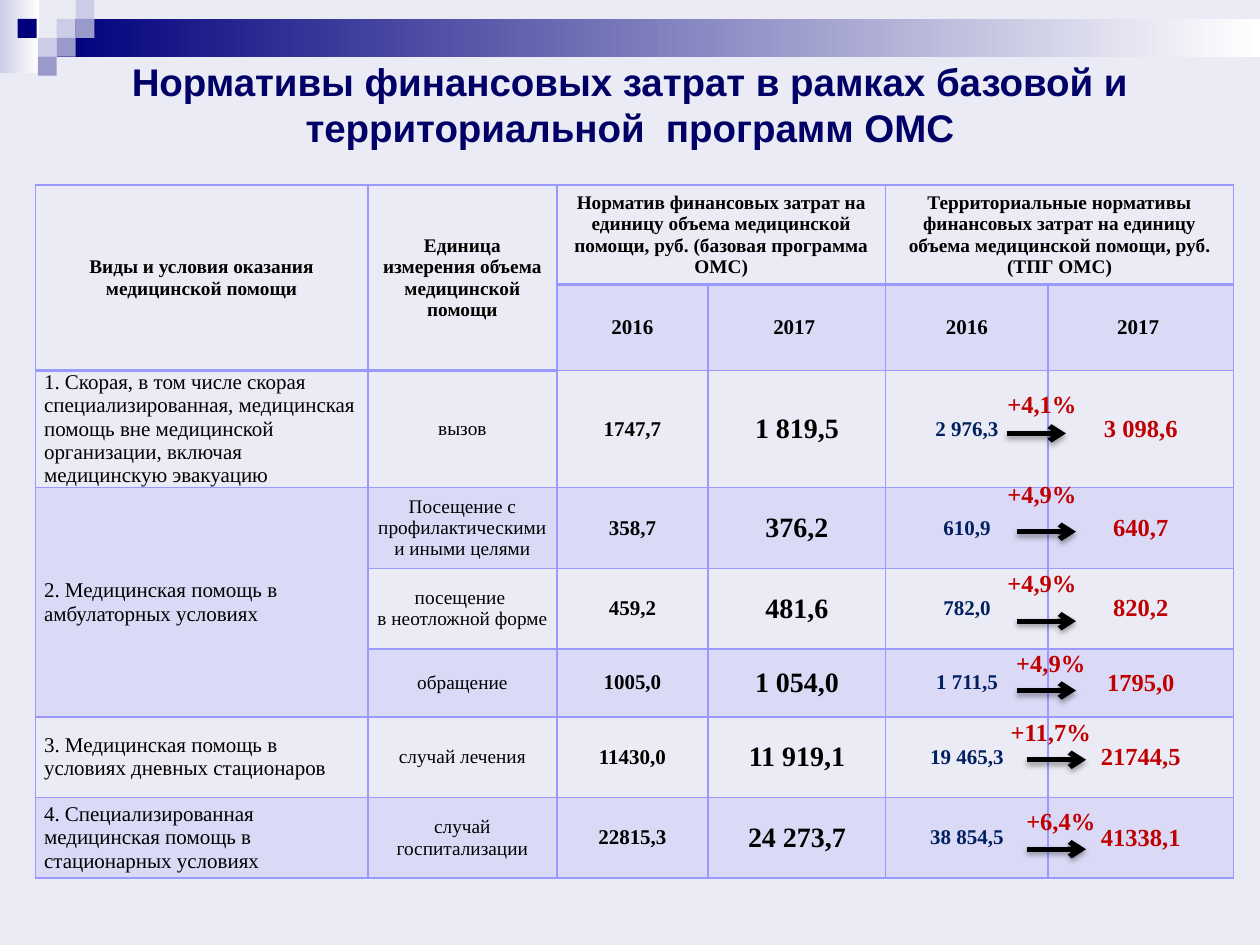
import pptx
import pptx.dml.color
import pptx.enum.shapes
import pptx.enum.text
import pptx.oxml
import pptx.oxml.ns
import pptx.util
from pptx.util import Inches

NAMESPACE = pptx.oxml.ns.nsdecls("a")
CENTER = pptx.enum.text.PP_ALIGN.CENTER
LEFT = pptx.enum.text.PP_ALIGN.LEFT
MIDDLE = pptx.enum.text.MSO_ANCHOR.MIDDLE
SERIF = "Times New Roman"
BLACK, NAVY, RED, LILAC = "000000", "002060", "C00000", "9999FF"


def color(value):
    return pptx.dml.color.RGBColor.from_string(value)


def apply(target, formats):
    for name, value in formats.items():
        setattr(target, name, value)


class SlideBuilder:
    def __init__(self, deck, background):
        self.page = deck.slides.add_slide(deck.slide_layouts[5])
        self.page.background.fill.solid()
        self.page.background.fill.fore_color.rgb = color(background)

    def put_text(self, frame, text, size, shade, bold=True, font=SERIF, align=CENTER):
        frame.text = text
        for para in frame.paragraphs:
            para.alignment = align
            for span in para.runs:
                apply(span.font, {"name": font, "size": pptx.util.Pt(size), "bold": bold})
                span.font.color.rgb = color(shade)

    def title(self, left, top, width, height, text):
        box = self.page.shapes.title
        apply(box, {"left": Inches(left), "top": Inches(top),
                    "width": Inches(width), "height": Inches(height)})
        apply(box.text_frame, {"vertical_anchor": MIDDLE, "word_wrap": True,
                               "auto_size": pptx.enum.text.MSO_AUTO_SIZE.NONE})
        self.put_text(box.text_frame, text, 22, "000066", font="Arial")

    def rectangle(self, left, top, width, height, *shades):
        box = self.page.shapes.add_shape(
            pptx.enum.shapes.MSO_SHAPE.RECTANGLE,
            Inches(left), Inches(top), Inches(width), Inches(height))
        box.shadow.inherit = False
        box.line.fill.background()
        if len(shades) == 1:
            box.fill.solid()
            box.fill.fore_color.rgb = color(shades[0])
        else:
            box.fill.gradient()
            box.fill.gradient_angle = 0
            for stop, shade in zip(box.fill.gradient_stops, shades):
                stop.color.rgb = color(shade)

    def label(self, left, top, text):
        box = self.page.shapes.add_textbox(
            Inches(left), Inches(top), Inches(1.02), Inches(0.34))
        box.text_frame.word_wrap = True
        self.put_text(box.text_frame, text, 14, RED)

    def arrow(self, left, top):
        line = self.page.shapes.add_connector(
            pptx.enum.shapes.MSO_CONNECTOR.STRAIGHT,
            Inches(left), Inches(top), Inches(left + 0.47), Inches(top))
        line.line.width = pptx.util.Pt(3)
        line.line.color.rgb = color(BLACK)
        line.line._get_or_add_ln().append(
            pptx.oxml.parse_xml(f'<a:tailEnd {NAMESPACE} type="arrow"/>'))
        line._element.spPr.append(pptx.oxml.parse_xml(
            f'<a:effectLst {NAMESPACE}><a:outerShdw blurRad="39370" dist="22860" '
            f'dir="5400000" rotWithShape="0"><a:srgbClr val="{BLACK}">'
            '<a:alpha val="35000"/></a:srgbClr></a:outerShdw></a:effectLst>'))

    def table(self, left, top, columns, heights):
        grid = self.page.shapes.add_table(
            len(heights), len(columns), Inches(left), Inches(top),
            Inches(sum(columns)), Inches(sum(heights))).table
        apply(grid, {"first_row": False, "horz_banding": False})
        for column, width in zip(grid.columns, columns):
            column.width = Inches(width)
        for row, height in zip(grid.rows, heights):
            row.height = Inches(height)
        return grid

    def cell(self, cell, tinted, bottom):
        apply(cell, {"vertical_anchor": MIDDLE, "margin_left": Inches(0.07),
                     "margin_right": Inches(0.07), "margin_top": 0, "margin_bottom": 0})
        properties = cell._tc.get_or_add_tcPr()
        for side, width in {"L": 1, "R": 1, "T": 1, "B": bottom}.items():
            properties.append(pptx.oxml.parse_xml(
                f'<a:ln{side} {NAMESPACE} w="{width * 12700}"><a:solidFill>'
                f'<a:srgbClr val="{LILAC}"/></a:solidFill></a:ln{side}>'))
        if tinted:
            cell.fill.solid()
            cell.fill.fore_color.rgb = color(LILAC)
            shade = properties.find(pptx.oxml.ns.qn("a:solidFill"))[0]
            shade.append(pptx.oxml.parse_xml(f'<a:alpha {NAMESPACE} val="20000"/>'))
        else:
            cell.fill.background()


HEADERS = [
    ["Виды и условия оказания медицинской помощи",
     "Единица измерения объема медицинской помощи",
     "Норматив финансовых затрат на единицу объема медицинской помощи, руб. "
     "(базовая программа ОМС)", "",
     "Территориальные нормативы финансовых затрат на единицу объема медицинской "
     "помощи, руб. (ТПГ ОМС)", ""],
    ["", "", "2016", "2017 ", "2016", "2017 "],
]
BODY = [
    ["1. Скорая, в том числе скорая специализированная, медицинская помощь вне "
     "медицинской организации, включая медицинскую эвакуацию",
     "вызов", "1747,7", "1 819,5", "2 976,3", "3 098,6"],
    ["2. Медицинская помощь в амбулаторных условиях",
     "Посещение с профилактическими и иными целями", "358,7", "376,2", "610,9", "640,7"],
    ["", "посещение \nв неотложной форме", "459,2", "481,6", "782,0", "820,2"],
    ["", "обращение", "1005,0", "1 054,0", "1 711,5", "1795,0"],
    ["3. Медицинская помощь в условиях дневных стационаров",
     "случай лечения", "11430,0", "11 919,1", "19 465,3", "21744,5"],
    ["4. Специализированная медицинская помощь в стационарных условиях",
     "случай госпитализации", "22815,3", "24 273,7", "38 854,5", "41338,1"],
]
COLUMN_STYLES = [
    {"size": 12, "shade": BLACK, "bold": False, "align": LEFT},
    {"size": 11, "shade": BLACK, "bold": False},
    {"size": 12, "shade": BLACK},
    {"size": 16, "shade": BLACK},
    {"size": 12, "shade": NAVY},
    {"size": 14, "shade": RED},
]
MERGES = [((0, 0), (1, 0)), ((0, 1), (1, 1)), ((0, 2), (0, 3)),
          ((0, 4), (0, 5)), ((3, 0), (5, 0))]
GROWTH = [
    (7.99, 3.44, 7.76, 3.04, "+4,1%"),
    (8.07, 4.22, 7.76, 3.75, "+4,9%"),
    (8.07, 4.93, 7.76, 4.46, "+4,9%"),
    (8.07, 5.48, 7.83, 5.09, "+4,9%"),
    (8.15, 6.03, 7.83, 5.64, "+11,7%"),
    (8.15, 6.74, 7.91, 6.35, "+6,4%"),
]
SQUARES = [(0.45, 0.15, "CCCCE6"), (0.6, 0, "CCCCE6"), (0.6, 0.15, "9999CC"),
           (0.3, 0.3, "CCCCE6"), (0.14, 0.15, "00007D"), (0.45, 0.3, "9999CC"),
           (0.3, 0.45, "9999CC")]


def fill_table(slide):
    grid = slide.table(0.28, 1.47, [2.64, 1.5, 1.2, 1.41, 1.29, 1.47],
                       [0.79, 0.67, 0.93, 0.64, 0.64, 0.54, 0.64, 0.64])
    for first, last in MERGES:
        grid.cell(*first).merge(grid.cell(*last))
    for row, texts in enumerate(HEADERS + BODY):
        for column, text in enumerate(texts):
            cell = grid.cell(row, column)
            header = row < len(HEADERS)
            tall_header = row == 1 and column < 2
            tinted = row % 2 == 1 and not tall_header
            slide.cell(cell, tinted, 2 if row == 0 or tall_header else 1)
            style = {"size": 11 + row, "shade": BLACK} if header else COLUMN_STYLES[column]
            if text:
                slide.put_text(cell.text_frame, text, **style)


def main():
    deck = pptx.Presentation()
    apply(deck, {"slide_width": Inches(10), "slide_height": Inches(7.5)})
    slide = SlideBuilder(deck, "EBEBF5")
    slide.rectangle(0, 0, 0.31, 0.58, "CCCCE6", "FFFFFF")
    slide.rectangle(0.45, 0.15, 9.55, 0.3, "00007D", "FFFFFF")
    for left, top, shade in SQUARES:
        slide.rectangle(left, top, 0.15, 0.15, shade)
    slide.title(0.5, 0.5, 9, 0.65,
                "Нормативы финансовых затрат в рамках базовой и территориальной  программ ОМС")
    fill_table(slide)
    for arrow_left, arrow_top, label_left, label_top, text in GROWTH:
        slide.arrow(arrow_left, arrow_top)
        slide.label(label_left, label_top, text)
    deck.save("out.pptx")


if __name__ == "__main__":
    main()
